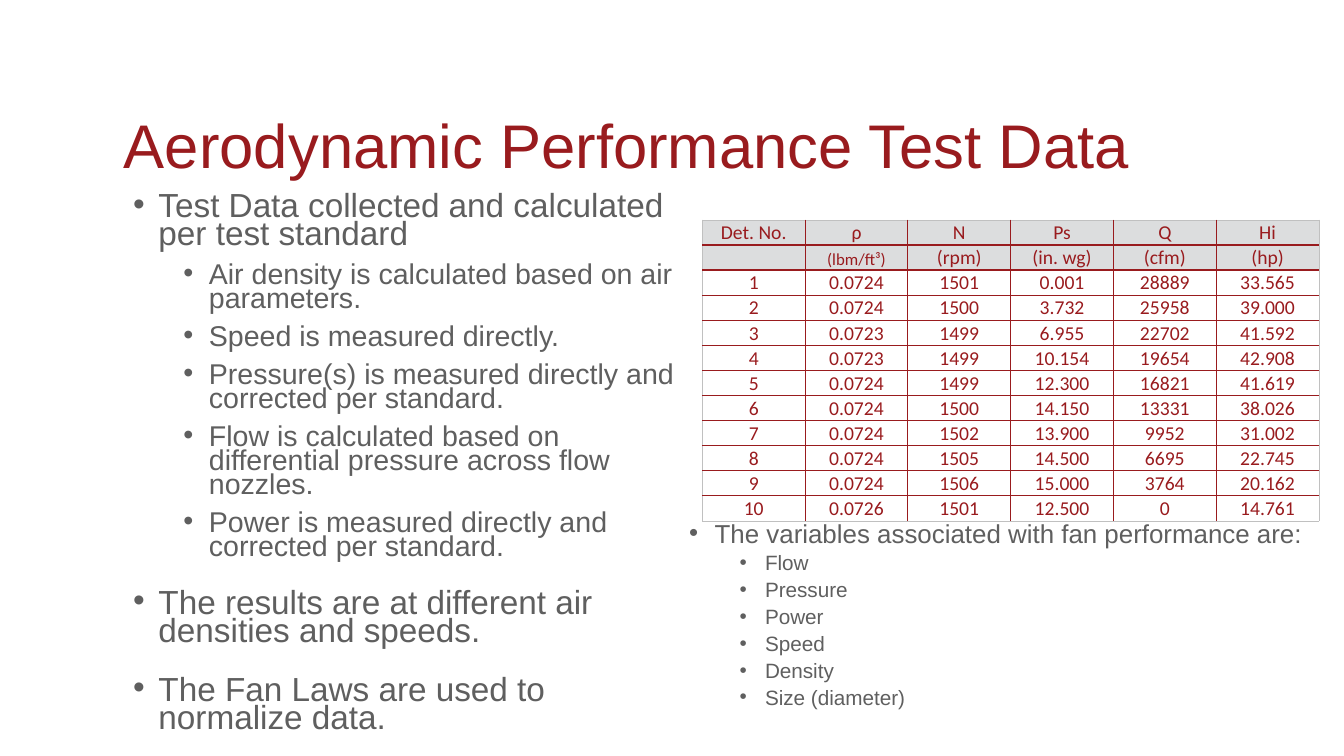
import pptx
import pptx.dml.color
import pptx.enum.text
import pptx.oxml
import pptx.oxml.ns
import pptx.util
from lxml import etree

Cm = pptx.util.Cm
Pt = pptx.util.Pt
RED = pptx.dml.color.RGBColor(0x99, 0x1B, 0x1E)
GREY = pptx.dml.color.RGBColor(0x5F, 0x5F, 0x5F)
HEADER_FILL = pptx.dml.color.RGBColor(0xDC, 0xDD, 0xDE)
OUTER_LINE = pptx.dml.color.RGBColor(0xC0, 0xC0, 0xC0)
WHITE = pptx.dml.color.RGBColor(0xFF, 0xFF, 0xFF)
ANCHOR = pptx.enum.text.MSO_ANCHOR

TEST_NOTES = [
    (0, "Test Data collected and calculated per test standard", 0),
    (1, "Air density is calculated based on air parameters.", 0),
    (1, "Speed is measured directly.", 0),
    (1, "Pressure(s) is measured directly and corrected per standard.", 0),
    (1, "Flow is calculated based on differential pressure across flow nozzles.", 0),
    (1, "Power is measured directly and corrected per standard.", 12),
    (0, "The results are at different air densities and speeds.", 12),
    (0, "The Fan Laws are used to normalize data.", 0),
]
VARIABLES = [(0, "The variables associated with fan performance are:", 0)] + [
    (1, name, 0)
    for name in ("Flow", "Pressure", "Power", "Speed", "Density", "Size (diameter)")
]
TEST_DATA = [
    ("Det. No.", "ρ", "N", "Ps", "Q", "Hi"),
    ("", "(lbm/ft³)", "(rpm)", "(in. wg)", "(cfm)", "(hp)"),
    ("1", "0.0724", "1501", "0.001", "28889", "33.565"),
    ("2", "0.0724", "1500", "3.732", "25958", "39.000"),
    ("3", "0.0723", "1499", "6.955", "22702", "41.592"),
    ("4", "0.0723", "1499", "10.154", "19654", "42.908"),
    ("5", "0.0724", "1499", "12.300", "16821", "41.619"),
    ("6", "0.0724", "1500", "14.150", "13331", "38.026"),
    ("7", "0.0724", "1502", "13.900", "9952", "31.002"),
    ("8", "0.0724", "1505", "14.500", "6695", "22.745"),
    ("9", "0.0724", "1506", "15.000", "3764", "20.162"),
    ("10", "0.0726", "1501", "12.500", "0", "14.761"),
]
HEADER_ROWS = 2


class SlideBuilder:
    text_font = "Arial"
    table_font = "Calibri"

    def __init__(self, slide):
        self.slide = slide
        slide.background.fill.solid()
        slide.background.fill.fore_color.rgb = WHITE

    def place(self, shape, left, top, width, height, anchor):
        shape.left, shape.top = Cm(left), Cm(top)
        shape.width, shape.height = Cm(width), Cm(height)
        frame = shape.text_frame
        frame.word_wrap = True
        frame.auto_size = pptx.enum.text.MSO_AUTO_SIZE.NONE
        frame.vertical_anchor = anchor
        return frame

    def add_run(self, paragraph, text, size, font, color):
        run = paragraph.add_run()
        run.text = text
        run.font.size = Pt(size)
        run.font.name = font
        run.font.color.rgb = color

    def title(self, text, *box):
        frame = self.place(self.slide.shapes.title, *box, ANCHOR.MIDDLE)
        paragraph = frame.paragraphs[0]
        paragraph.alignment = pptx.enum.text.PP_ALIGN.LEFT
        paragraph.line_spacing = 0.9
        self.add_run(paragraph, text, 44, self.text_font, RED)

    def bullets(self, shape, box, items, sizes, spacing, space_before):
        frame = self.place(shape, *box, ANCHOR.TOP)
        for index, (level, text, space_after) in enumerate(items):
            paragraph = frame.paragraphs[0] if index == 0 else frame.add_paragraph()
            paragraph.level = level
            paragraph.alignment = pptx.enum.text.PP_ALIGN.LEFT
            paragraph.line_spacing = spacing
            paragraph.space_before = Pt(space_before[level] if index else 0)
            paragraph.space_after = Pt(space_after)
            properties = paragraph._p.get_or_add_pPr()
            properties.set("marL", str(Cm(0.64 + 1.27 * level)))
            properties.set("indent", str(-Cm(0.64)))
            font = etree.SubElement(properties, pptx.oxml.ns.qn("a:buFont"))
            font.set("typeface", self.text_font)
            bullet = etree.SubElement(properties, pptx.oxml.ns.qn("a:buChar"))
            bullet.set("char", "•")
            self.add_run(paragraph, text, sizes[level], self.text_font, GREY)

    def borders(self, cell, outer):
        properties = cell._tc.get_or_add_tcPr()
        for index, (side, is_outer) in enumerate(outer.items()):
            width, color = (Pt(0.5), OUTER_LINE) if is_outer else (Pt(1), RED)
            line = pptx.oxml.parse_xml(
                f'<a:{side} {pptx.oxml.ns.nsdecls("a")} w="{width}"><a:solidFill>'
                f'<a:srgbClr val="{color}"/></a:solidFill></a:{side}>'
            )
            properties.insert(index, line)

    def table(self, rows, left, top, width, row_height):
        last_row, last_column = len(rows) - 1, len(rows[0]) - 1
        frame = self.slide.shapes.add_table(
            len(rows), len(rows[0]), Cm(left), Cm(top), Cm(width), Cm(row_height * len(rows))
        )
        table = frame.table
        table.horz_banding = False
        for row_index, values in enumerate(rows):
            table.rows[row_index].height = Cm(row_height)
            is_header = row_index < HEADER_ROWS
            for column_index, value in enumerate(values):
                cell = table.cell(row_index, column_index)
                cell.margin_left = cell.margin_right = cell.margin_top = Cm(0.03)
                cell.margin_bottom = 0
                cell.vertical_anchor = ANCHOR.BOTTOM if is_header else ANCHOR.MIDDLE
                if is_header:
                    cell.fill.solid()
                    cell.fill.fore_color.rgb = HEADER_FILL
                else:
                    cell.fill.background()
                paragraph = cell.text_frame.paragraphs[0]
                paragraph.alignment = pptx.enum.text.PP_ALIGN.CENTER
                if value:
                    size = 12 if value == "(lbm/ft³)" else 14
                    self.add_run(paragraph, value, size, self.table_font, RED)
                else:
                    end = etree.SubElement(paragraph._p, pptx.oxml.ns.qn("a:endParaRPr"))
                    end.set("sz", "1200")
                self.borders(cell, {
                    "lnL": column_index == 0,
                    "lnR": column_index == last_column,
                    "lnT": row_index == 0,
                    "lnB": row_index == last_row,
                })


def main():
    presentation = pptx.Presentation()
    presentation.slide_width, presentation.slide_height = Cm(33.87), Cm(19.05)
    slide = presentation.slides.add_slide(presentation.slide_layouts[1])
    builder = SlideBuilder(slide)
    builder.title("Aerodynamic Performance Test Data", 2.87, 2.69, 30.38, 2.11)
    builder.bullets(
        slide.placeholders[1], (3.1, 4.8, 14.6, 13.77), TEST_NOTES, (23.8, 20.4), 0.7, (10, 10)
    )
    builder.table(TEST_DATA, 17.7, 5.54, 15.54, 0.61)
    variables_box = slide.shapes.add_textbox(0, 0, 0, 0)
    builder.bullets(
        variables_box, (17.12, 13.06, 16.74, 5.08), VARIABLES, (18.5, 14.8), 0.8, (10, 5)
    )
    presentation.save("out.pptx")


if __name__ == "__main__":
    main()
